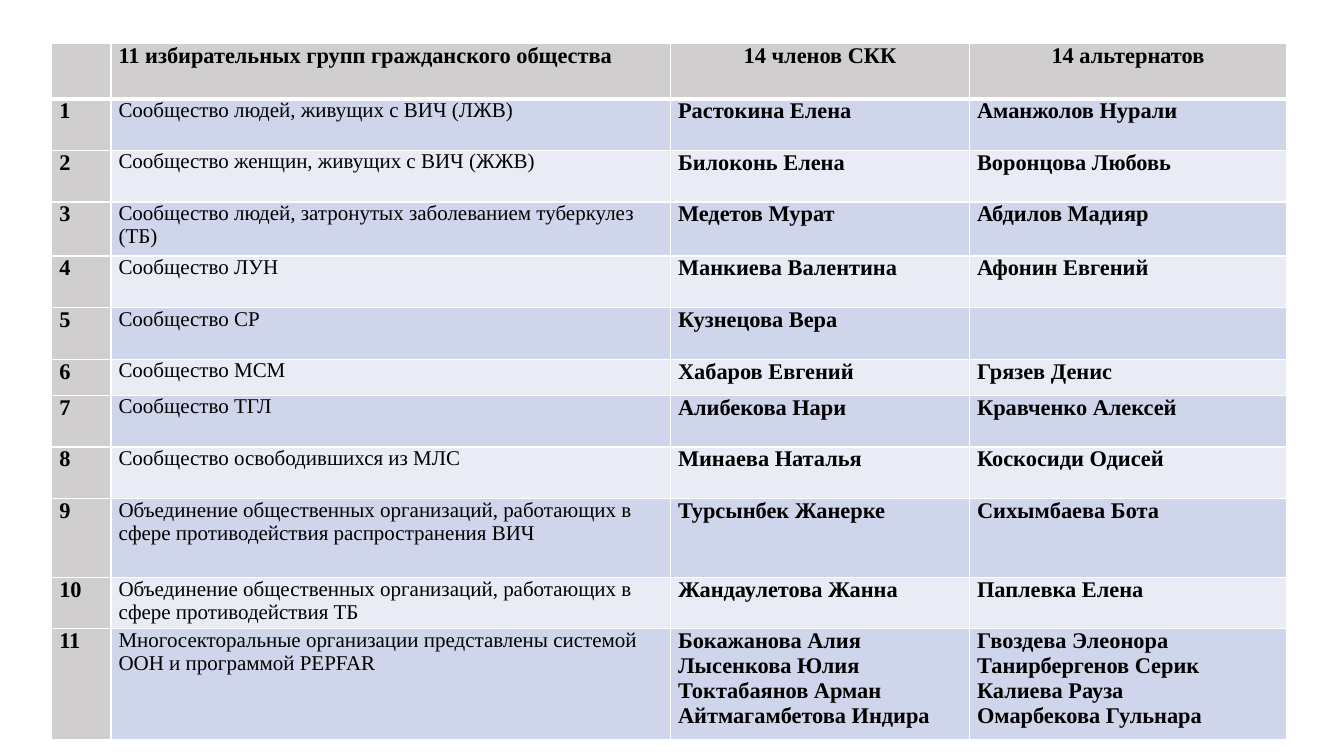
"""Build a slide with the table of civil society groups, members and alternates."""
from typing import NamedTuple

from lxml import etree
from pptx import Presentation
from pptx import util as u
from pptx.dml.color import RGBColor
from pptx.enum import text
from pptx.oxml import ns

WHITE = RGBColor(0xFF, 0xFF, 0xFF)
BLACK = RGBColor(0x00, 0x00, 0x00)
GREY = RGBColor(0xD0, 0xCE, 0xCE)
BLUE = RGBColor(0xCF, 0xD5, 0xEA)
PALE = RGBColor(0xE9, 0xEB, 0xF5)
LEFT, CENTER, JUSTIFY = (
    text.PP_ALIGN.LEFT, text.PP_ALIGN.CENTER, text.PP_ALIGN.JUSTIFY)

COLUMN_WIDTHS = (42.3, 399.7, 213.6, 226.3)
HEADER_HEIGHT = 39.6
ROW_HEIGHT = 36.9
INSETS = {"margin_left": u.Pt(5.4), "margin_right": u.Pt(5.4),
          "margin_top": 0, "margin_bottom": 0}
STRONG = {"name": "Times New Roman", "size": u.Pt(16), "bold": True}
PLAIN = {**STRONG, "size": u.Pt(15), "bold": False}
HEADINGS = (
    ("", LEFT),
    ("11 избирательных групп гражданского общества", LEFT),
    ("14 членов СКК", CENTER),
    ("14 альтернатов", CENTER),
)


class Group(NamedTuple):
    """One electoral group with its members and alternates."""
    title: str
    members: str
    alternates: str
    height: float = ROW_HEIGHT


GROUPS = (
    Group("Сообщество людей, живущих с ВИЧ (ЛЖВ)",
          "Растокина Елена", "Аманжолов Нурали"),
    Group("Сообщество женщин, живущих с ВИЧ (ЖЖВ)",
          "Билоконь Елена", "Воронцова Любовь"),
    Group("Сообщество людей, затронутых заболеванием туберкулез (ТБ)",
          "Медетов Мурат", "Абдилов Мадияр", 38.6),
    Group("Сообщество ЛУН", "Манкиева Валентина", "Афонин Евгений"),
    Group("Сообщество СР", "Кузнецова Вера", ""),
    Group("Сообщество МСМ", "Хабаров Евгений", "Грязев Денис", 25.8),
    Group("Сообщество ТГЛ", "Алибекова Нари", "Кравченко Алексей"),
    Group("Сообщество освободившихся из МЛС",
          "Минаева Наталья", "Коскосиди Одисей"),
    Group("Объединение общественных организаций, работающих в сфере "
          "противодействия распространения ВИЧ",
          "Турсынбек Жанерке", "Сихымбаева Бота", 56.3),
    Group("Объединение общественных организаций, работающих в сфере "
          "противодействия ТБ",
          "Жандаулетова Жанна", "Паплевка Елена", 36.6),
    Group("Многосекторальные организации представлены системой ООН "
          "и программой PEPFAR",
          "Бокажанова Алия\nЛысенкова Юлия\nТоктабаянов Арман\n"
          "Айтмагамбетова Индира",
          "Гвоздева Элеонора\nТанирбергенов Серик\nКалиева Рауза\n"
          "Омарбекова Гульнара", 79.5),
)


def set_format(target: object, values: dict) -> None:
    """Set each named attribute on the target."""
    for name, value in values.items():
        setattr(target, name, value)


def draw_borders(cell, top: float = 1, bottom: float = 1) -> None:
    """Give the cell white borders of the given widths in points."""
    tc_pr = cell._tc.get_or_add_tcPr()
    for side, width in (("L", 1), ("R", 1), ("T", top), ("B", bottom)):
        line = etree.SubElement(tc_pr, ns.qn(f"a:ln{side}"), w=str(u.Pt(width)))
        fill = etree.SubElement(line, ns.qn("a:solidFill"))
        etree.SubElement(fill, ns.qn("a:srgbClr"), val=str(WHITE))


def fill_cell(cell, words: str, color: RGBColor, font: dict,
              align: text.PP_ALIGN = LEFT) -> None:
    """Colour the cell and write one paragraph per line of words."""
    cell.fill.solid()
    cell.fill.fore_color.rgb = color
    set_format(cell, INSETS)
    tf = cell.text_frame
    tf.text = words
    for p in tf.paragraphs:
        p.alignment = align
        set_format(p.font, font)
        for r in p.runs:
            set_format(r.font, font)
            r.font.color.rgb = BLACK


def main() -> None:
    """Build and save the slide."""
    prs = Presentation()
    prs.slide_width, prs.slide_height = u.Pt(960), u.Pt(540)
    s = prs.slides.add_slide(prs.slide_layouts[6])
    heights = (HEADER_HEIGHT, *(group.height for group in GROUPS))
    table = s.shapes.add_table(
        len(heights), len(COLUMN_WIDTHS), u.Pt(37), u.Pt(30.9),
        u.Pt(sum(COLUMN_WIDTHS)), u.Pt(sum(heights))).table
    for column, width in zip(table.columns, COLUMN_WIDTHS):
        column.width = u.Pt(width)
    for row, height in zip(table.rows, heights):
        row.height = u.Pt(height)

    for i, (heading, align) in enumerate(HEADINGS):
        cell = table.cell(0, i)
        draw_borders(cell, bottom=3)
        fill_cell(cell, heading, GREY, STRONG, align)

    for number, group in enumerate(GROUPS, 1):
        band = BLUE if number % 2 else PALE
        member_align = JUSTIFY if "\n" in group.members else LEFT
        contents = (
            (str(number), GREY, STRONG, LEFT),
            (group.title, band, PLAIN, LEFT),
            (group.members, band, STRONG, member_align),
            (group.alternates, band, STRONG, LEFT),
        )
        for i, content in enumerate(contents):
            cell = table.cell(number, i)
            draw_borders(cell, top=3 if number == 1 else 1)
            fill_cell(cell, *content)

    prs.save("out.pptx")


if __name__ == "__main__":
    main()
